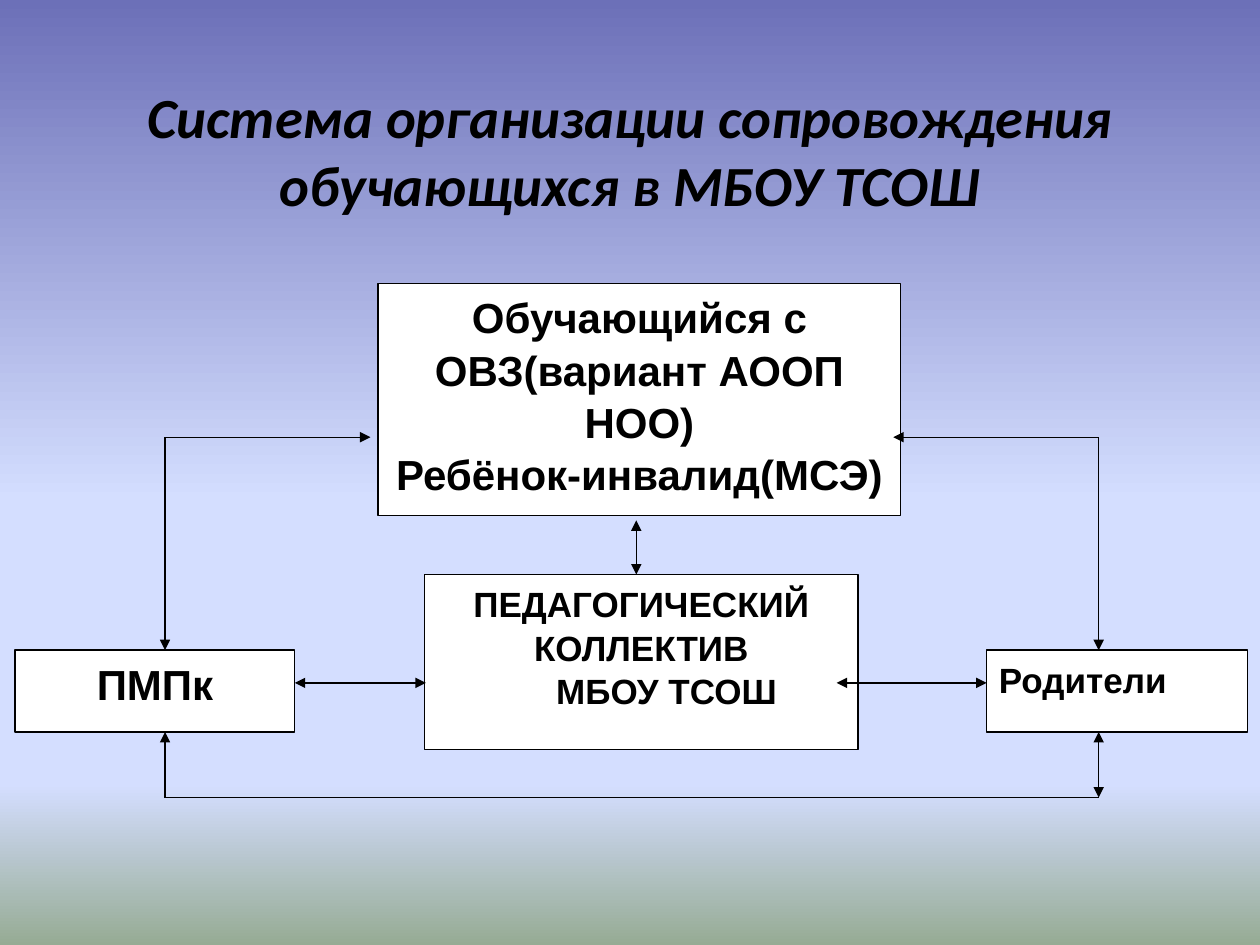
from collections import namedtuple

from lxml import etree
from pptx import Presentation
from pptx.dml.color import RGBColor
from pptx.enum.shapes import MSO_CONNECTOR, MSO_SHAPE
from pptx.enum.text import MSO_ANCHOR, PP_ALIGN
from pptx.oxml.ns import qn
from pptx.util import Inches, Pt

BLACK = RGBColor(0x00, 0x00, 0x00)
WHITE = RGBColor(0xFF, 0xFF, 0xFF)
INDIGO = RGBColor(0x6C, 0x70, 0xB8)
PALE_BLUE = RGBColor(0xD4, 0xDE, 0xFF)
SAGE = RGBColor(0x96, 0xAB, 0x94)
SKY = [(0, INDIGO), (53, PALE_BLUE), (83, PALE_BLUE), (100, SAGE)]

CENTER, LEFT = PP_ALIGN.CENTER, PP_ALIGN.LEFT
TOP = MSO_ANCHOR.TOP
RECTANGLE = MSO_SHAPE.RECTANGLE
STRAIGHT = MSO_CONNECTOR.STRAIGHT

# The slide is a grid of 100 columns by 75 rows of square cells
COLUMNS, ROWS = 100, 75
CELL = Inches(10) // COLUMNS
Box = namedtuple("Box", "left top width height")


def cells(*counts):
    return [round(count * CELL) for count in counts]


def paint_background(slide):
    fill = slide.background.fill
    fill.gradient()
    fill.gradient_angle = 270
    stops = slide.background._cSld.find(".//" + qn("a:gsLst"))
    for stop in list(stops):
        stops.remove(stop)
    for position, color in SKY:
        stop = etree.SubElement(stops, qn("a:gs"), pos=str(position * 1000))
        etree.SubElement(stop, qn("a:srgbClr"), val=str(color))


def add_title(slide, box, text):
    frame = slide.shapes.add_textbox(*cells(*box)).text_frame
    frame.word_wrap = True
    frame.vertical_anchor = TOP
    frame.margin_top = cells(3.6)[0]
    paragraph = frame.paragraphs[0]
    paragraph.text = text
    paragraph.alignment = CENTER
    font = paragraph.font
    font.name, font.size = "Calibri", Pt(32.4)
    font.bold = font.italic = True
    font.color.rgb = BLACK


def add_node(slide, box, lines, size, alignment=CENTER):
    """Add a white box; each line is a text and its left indent in cells."""
    shape = slide.shapes.add_shape(RECTANGLE, *cells(*box))
    shape.shadow.inherit = False
    shape.fill.solid()
    shape.fill.fore_color.rgb = WHITE
    shape.line.color.rgb = BLACK
    shape.line.width = Pt(0.75)
    frame = shape.text_frame
    frame.word_wrap = True
    frame.vertical_anchor = TOP
    for index, (text, indent) in enumerate(lines):
        paragraph = frame.add_paragraph() if index else frame.paragraphs[0]
        paragraph.text = text
        paragraph.alignment = alignment
        paragraph.line_spacing = 1.04
        if indent:
            paragraph._p.get_or_add_pPr().set("marL", str(cells(indent)[0]))
        font = paragraph.font
        font.name, font.size, font.bold = "Arial", Pt(size), True
        font.color.rgb = BLACK


def add_line(slide, start, end, arrows=()):
    connector = slide.shapes.add_connector(STRAIGHT, *cells(*start, *end))
    connector.line.color.rgb = BLACK
    connector.line.width = Pt(0.75)
    line = connector.line._get_or_add_ln()
    for arrow in arrows:
        etree.SubElement(line, qn("a:" + arrow), type="triangle")
    etree.SubElement(connector._element.spPr, qn("a:effectLst"))


def add_diagram(slide, area):
    def inside(left, top, width, height):
        return Box(area.left + left, area.top + top, width, height)

    student = inside(28.8, 0, 41.5, 18.4)
    staff = inside(32.5, 23.1, 34.4, 13.9)
    council = inside(0, 29.1, 22.2, 6.5)
    parents = inside(77.1, 29.1, 20.7, 6.5)

    # Boxes
    add_node(slide, student, [("Обучающийся с ОВЗ(вариант АООП НОО)", 0),
                              ("Ребёнок-инвалид(МСЭ)", 0)], 24)
    add_node(slide, staff, [("ПЕДАГОГИЧЕСКИЙ КОЛЛЕКТИВ", 0),
                            ("МБОУ ТСОШ", 4)], 20)
    add_node(slide, council, [("ПМПк", 0)], 24)
    add_node(slide, parents, [("Родители", 0)], 20, LEFT)

    # Side rails, from the student box down to the lower line
    left_rail, right_rail = area.left + 11.9, area.left + 86
    upper, lower = area.top + 12.2, area.top + area.height
    one_way, two_way = ("tailEnd",), ("headEnd", "tailEnd")
    student_right = student.left + student.width
    for rail, target, lower_arrows in (
            (left_rail, student.left - 0.6, one_way),
            (right_rail, student_right - 0.6, two_way)):
        add_line(slide, (rail, upper), (target, upper), one_way)
        add_line(slide, (rail, upper), (rail, council.top), one_way)
        add_line(slide, (rail, lower), (rail, council.top + council.height),
                 lower_arrows)
    add_line(slide, (left_rail, lower), (right_rail, lower))

    # Two-way links of the staff box
    middle, level = area.left + 49.3, area.top + 31.7
    add_line(slide, (middle, staff.top),
             (middle, student.top + student.height + 0.4), two_way)
    add_line(slide, (council.left + council.width, level),
             (staff.left + 0.1, level), two_way)
    add_line(slide, (staff.left + staff.width - 1.7, level),
             (parents.left, level), two_way)


def main():
    presentation = Presentation()
    presentation.slide_width, presentation.slide_height = cells(COLUMNS, ROWS)
    slide = presentation.slides.add_slide(presentation.slide_layouts[6])
    paint_background(slide)
    add_diagram(slide, Box(1.2, 22.5, 97.8, 40.8))
    add_title(slide, Box(5, 2.9, 90, 12.7),
              "Система организации сопровождения обучающихся в МБОУ ТСОШ")
    presentation.save("out.pptx")


if __name__ == "__main__":
    main()
